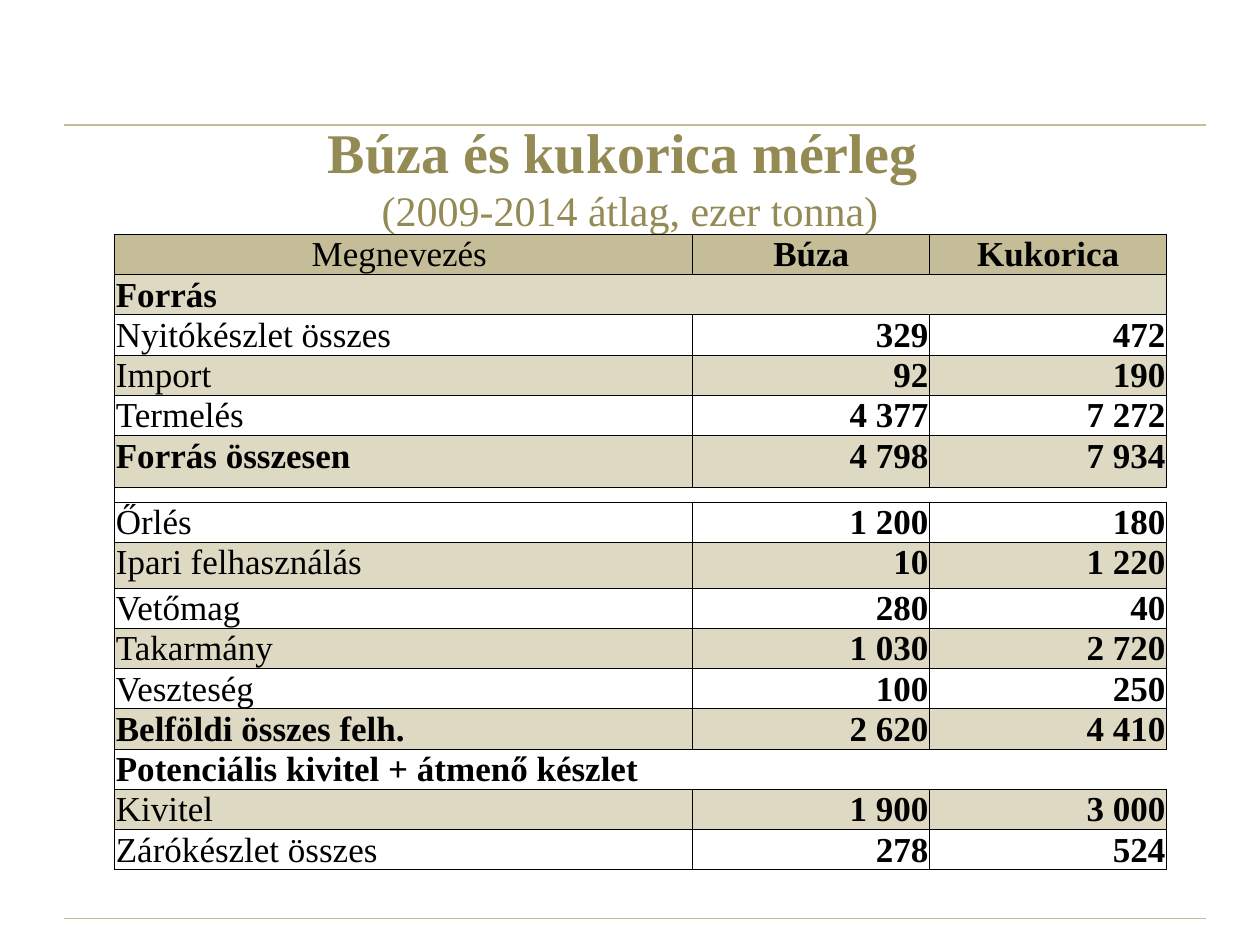
from dataclasses import dataclass

from lxml.etree import SubElement
from pptx import Presentation
from pptx.dml.color import RGBColor
from pptx.enum.shapes import MSO_CONNECTOR
from pptx.enum.text import MSO_ANCHOR, PP_ALIGN
from pptx.oxml.ns import qn
from pptx.util import Pt


@dataclass(frozen=True)
class Theme:
    font: str = "Times New Roman"
    title: str = "948A54"
    text: str = "000000"
    border: str = "000000"
    rule: str = "C4BD97"
    header: str = "C4BD97"
    band: str = "DDD9C3"
    title_size: float = 32
    subtitle_size: float = 24
    table_size: float = 20
    border_width: float = 0.5
    rule_width: float = 0.75


THEME = Theme()

ROW_HEIGHT = 23
SPECIAL_HEIGHTS = {5: 29.5, 6: 8.5, 8: 26.3}
COLUMN_WIDTHS = (330.4, 135.4, 135.4)

# One entry per row: texts (a single text spans the row); empty is the gap
ROWS = [
    ("Megnevezés ", "Búza", "Kukorica"),
    ("Forrás",),
    ("Nyitókészlet összes", "329", "472"),
    ("Import", "92", "190"),
    ("Termelés", "4 377", "7 272"),
    ("Forrás összesen", "4 798", "7 934"),
    ("",),
    ("Őrlés", "1 200", "180"),
    ("Ipari felhasználás", "10", "1 220"),
    ("Vetőmag", "280", "40"),
    ("Takarmány", "1 030", "2 720"),
    ("Veszteség", "100", "250"),
    ("Belföldi összes felh.", "2 620", "4 410"),
    ("Potenciális kivitel + átmenő készlet",),
    ("Kivitel", "1 900", "3 000"),
    ("Zárókészlet összes", "278", "524"),
]
BANDED_ROWS = {1, 3, 5, 8, 10, 12, 14}
BOLD_LABEL_ROWS = {1, 5, 12, 13}
OPEN_RIGHT_ROWS = {6, 13}


def add_run(paragraph, text, size, color, bold):
    run = paragraph.add_run()
    run.text = text
    run.font.name = THEME.font
    run.font.size = Pt(size)
    run.font.bold = bold
    run.font.color.rgb = RGBColor.from_string(color)


def add_rule(slide, left, top, width):
    rule = slide.shapes.add_connector(
        MSO_CONNECTOR.STRAIGHT, Pt(left), Pt(top), Pt(left + width), Pt(top))
    rule.line.color.rgb = RGBColor.from_string(THEME.rule)
    rule.line.width = Pt(THEME.rule_width)
    SubElement(rule._element.spPr, qn("a:effectLst"))


def place_title(slide, left, top, width, height):
    title = slide.shapes.title
    title.left, title.top = Pt(left), Pt(top)
    title.width, title.height = Pt(width), Pt(height)
    frame = title.text_frame
    frame.word_wrap = True
    frame.vertical_anchor = MSO_ANCHOR.MIDDLE
    paragraph = frame.paragraphs[0]
    paragraph.alignment = PP_ALIGN.CENTER
    add_run(paragraph, "Búza és kukorica mérleg ", THEME.title_size, THEME.title, True)
    paragraph.add_line_break()
    add_run(paragraph, "(2009-2014 átlag, ezer tonna)", THEME.subtitle_size, THEME.title, False)


def set_borders(cell, sides):
    properties = cell._tc.get_or_add_tcPr()
    for side in "LRTB":
        line = SubElement(properties, qn(f"a:ln{side}"), w=str(Pt(THEME.border_width)))
        if side in sides:
            fill = SubElement(line, qn("a:solidFill"))
            SubElement(fill, qn("a:srgbClr"), val=THEME.border)
        else:
            SubElement(line, qn("a:noFill"))


def fill_cell(cell, row, column):
    if row == 0 or row in BANDED_ROWS:
        cell.fill.solid()
        color = THEME.header if row == 0 else THEME.band
        cell.fill.fore_color.rgb = RGBColor.from_string(color)
    else:
        cell.fill.background()


def write_cell(cell, text, row, column):
    paragraph = cell.text_frame.paragraphs[0]
    if not text:
        # A tiny type size keeps the gap row low
        SubElement(paragraph._p, qn("a:endParaRPr"), sz="100")
        return
    cell.margin_left = cell.margin_right = cell.margin_top = Pt(0.72)
    cell.margin_bottom = Pt(0)
    if row == 0:
        paragraph.alignment = PP_ALIGN.CENTER
    else:
        paragraph.alignment = PP_ALIGN.RIGHT if column else PP_ALIGN.LEFT
    bold = column > 0 or row in BOLD_LABEL_ROWS
    add_run(paragraph, text, THEME.table_size, THEME.text, bold)


def place_balance_table(slide, left, top):
    heights = [SPECIAL_HEIGHTS.get(row, ROW_HEIGHT) for row in range(len(ROWS))]
    table = slide.shapes.add_table(
        len(ROWS), len(COLUMN_WIDTHS), Pt(left), Pt(top),
        Pt(sum(COLUMN_WIDTHS)), Pt(sum(heights))).table
    table.first_row = table.horz_banding = False
    for column, width in enumerate(COLUMN_WIDTHS):
        table.columns[column].width = Pt(width)

    last = len(COLUMN_WIDTHS) - 1
    for row, texts in enumerate(ROWS):
        table.rows[row].height = Pt(heights[row])
        spanning = len(texts) == 1
        for column in range(last + 1):
            cell = table.cell(row, column)
            sides = "TB"
            if column == 0 or not spanning:
                sides += "L"
            if row not in OPEN_RIGHT_ROWS and (column in (0, last) or not spanning):
                sides += "R"
            set_borders(cell, sides)
            fill_cell(cell, row, column)
        if spanning:
            table.cell(row, 0).merge(table.cell(row, last))
        for column, text in enumerate(texts):
            write_cell(table.cell(row, column), text, row, column)


def main():
    presentation = Presentation()
    presentation.slide_width, presentation.slide_height = Pt(720), Pt(540)
    slide = presentation.slides.add_slide(presentation.slide_layouts[5])

    # Rules above the title and below the table
    for top in (71.5, 525):
        add_rule(slide, left=36.7, top=top, width=652.3)
    place_title(slide, left=0, top=67, width=720, height=67.7)
    place_balance_table(slide, left=65.5, top=133.9)

    presentation.save("out.pptx")


if __name__ == "__main__":
    main()
